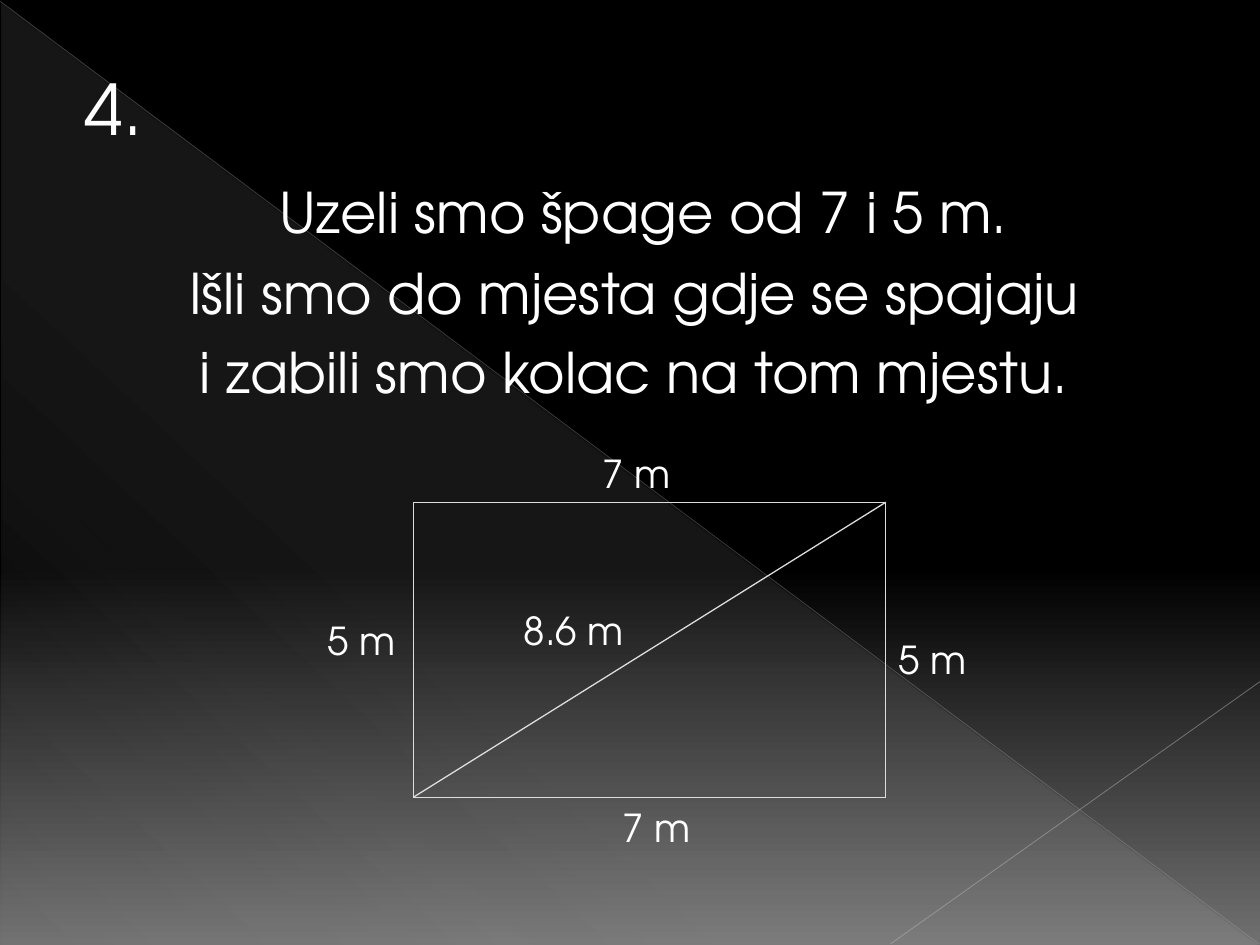
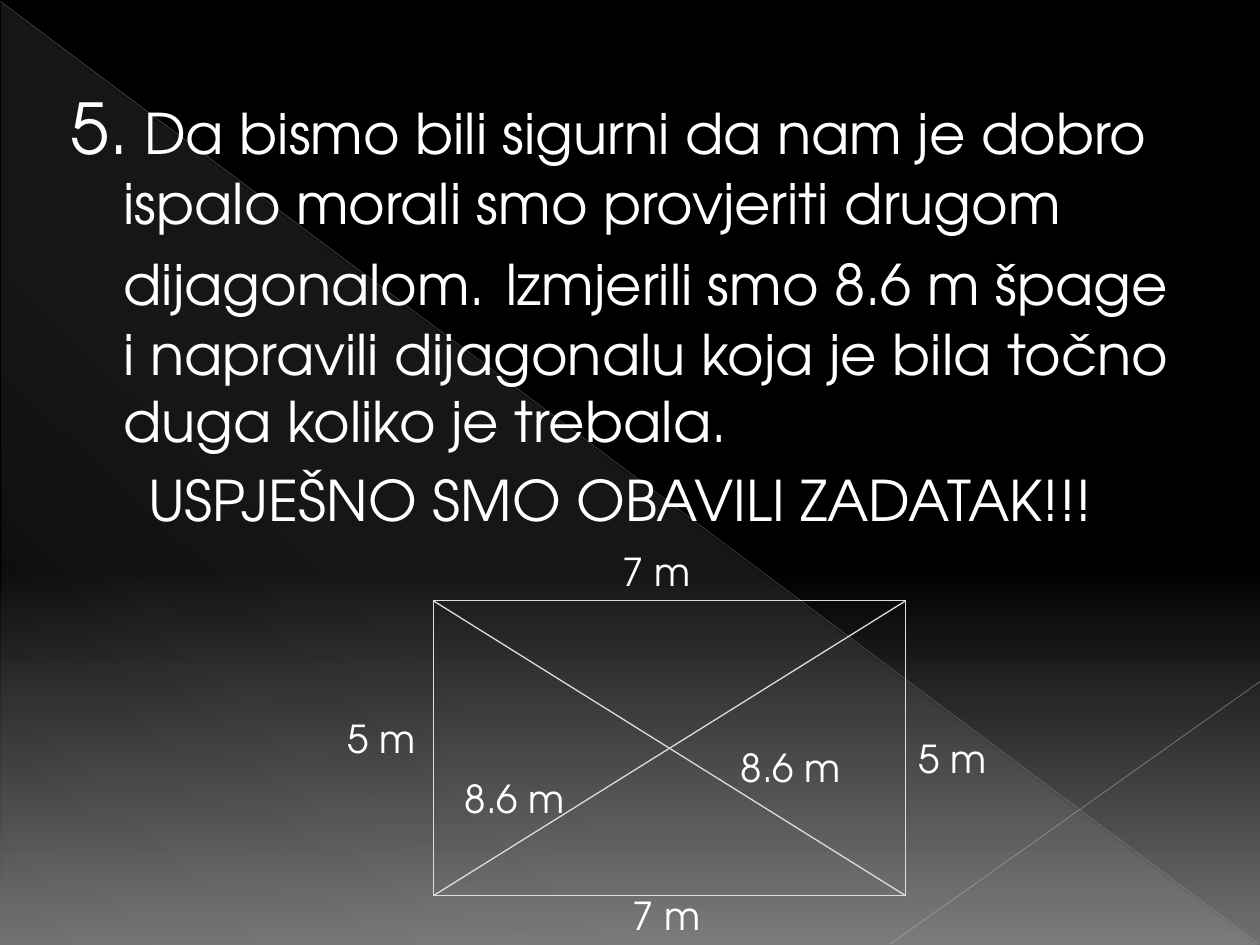
"""Build two slides on checking a measured rectangle with its diagonals."""
from dataclasses import dataclass

from lxml import etree
from pptx import Presentation
from pptx.dml.color import RGBColor
from pptx.enum.shapes import MSO_CONNECTOR, MSO_SHAPE
from pptx.enum.text import MSO_AUTO_SIZE, PP_ALIGN
from pptx.oxml.ns import qn
from pptx.util import Pt

STRAIGHT = MSO_CONNECTOR.STRAIGHT
RIGHT_TRIANGLE = MSO_SHAPE.RIGHT_TRIANGLE
CENTER = PP_ALIGN.CENTER
LEFT = PP_ALIGN.LEFT
NO_AUTOFIT = MSO_AUTO_SIZE.NONE
GROW = MSO_AUTO_SIZE.SHAPE_TO_FIT_TEXT


@dataclass(frozen=True)
class Theme:
    """Hold the colours, font and type sizes of the deck."""
    font: str = "TeX Gyre Adventor"
    text: str = "FFFFFF"
    rectangle_line: str = "DDDDDD"
    diagonal_line: str = "B4B4B4"
    corner_line: str = "BDBDBD"
    background: tuple = ((0, "000000", 100), (60, "000000", 100), (100, "707070", 100))
    veil: tuple = ((0, "F8F8F8", 10), (70, "F8F8F8", 8), (100, "F8F8F8", 1))
    number_size: int = 40
    body_size: int = 32
    label_size: int = 22


THEME = Theme()
SLIDE_WIDTH, SLIDE_HEIGHT = 720, 540
RECTANGLE_WIDTH, RECTANGLE_HEIGHT = 270, 168.6
LABEL_HEIGHT = 33.8


def add_run(paragraph, text, *, size=THEME.body_size, color=THEME.text):
    """Append formatted text to a paragraph."""
    run = paragraph.add_run()
    run.text = text
    run.font.name = THEME.font
    run.font.size = Pt(size)
    run.font.color.rgb = RGBColor.from_string(color)


def set_alpha(color_element, percent):
    """Make a colour element partly transparent."""
    etree.SubElement(color_element, qn("a:alpha")).set("val", str(percent * 1000))


def set_gradient(fill, owner, stops, angle):
    """Give the fill of an owner element a linear gradient."""
    fill.gradient()
    gradient = owner.find(".//" + qn("a:gradFill"))
    stop_list = gradient.find(qn("a:gsLst"))
    for stop in list(stop_list):
        stop_list.remove(stop)
    for position, color, opacity in stops:
        stop = etree.SubElement(stop_list, qn("a:gs"), pos=str(position * 1000))
        color_element = etree.SubElement(stop, qn("a:srgbClr"), val=color)
        set_alpha(color_element, opacity)
    gradient.find(qn("a:lin")).set("ang", str(angle * 60000))


def add_line(shapes, start, end, *, color=THEME.rectangle_line, width=0.75, opacity=100):
    """Draw a straight line without a shadow."""
    line = shapes.add_connector(STRAIGHT, *(Pt(value) for value in (*start, *end)))
    line.line.color.rgb = RGBColor.from_string(color)
    line.line.width = Pt(width)
    properties = line.element.spPr
    etree.SubElement(properties, qn("a:effectLst"))
    if opacity < 100:
        set_alpha(properties.find(".//" + qn("a:srgbClr")), opacity)
    return line


def add_label(shapes, text, left, top, width):
    """Add a measurement label."""
    box = shapes.add_textbox(Pt(left), Pt(top), Pt(width), Pt(LABEL_HEIGHT))
    box.text_frame.word_wrap = True
    box.text_frame.auto_size = GROW
    add_run(box.text_frame.paragraphs[0], text, size=THEME.label_size)


def decorate_layout(presentation, layout, slide):
    """Put the background, veil and thin lines behind every slide."""
    master = presentation.slide_master
    set_gradient(master.background.fill, master.element, THEME.background, 90)
    veil = slide.shapes.add_shape(RIGHT_TRIANGLE, Pt(0.7), Pt(1.4), Pt(718.6), Pt(538.6))
    veil.shadow.inherit = False
    veil.line.fill.background()
    set_gradient(veil.fill, veil.element, THEME.veil, 133)
    diagonal = add_line(slide.shapes, (0, 0.7), (719.3, 539.3),
                        color=THEME.diagonal_line, width=0.39, opacity=35)
    corner = add_line(slide.shapes, (SLIDE_WIDTH, 389.5), (509, 539.3),
                      color=THEME.corner_line, width=0.47, opacity=45)
    for index, shape in enumerate((veil, diagonal, corner)):
        shape.element.find(".//" + qn("p:cNvPr")).set("id", str(20 + index))
        layout.shapes.element.insert(2 + index, shape.element)


def add_slide(presentation, layout):
    """Add a slide that keeps only the body placeholder."""
    slide = presentation.slides.add_slide(layout)
    title = slide.shapes.title.element
    title.getparent().remove(title)
    return slide


def fill_body(slide, left, top, height, paragraphs):
    """Fill the body with paragraphs of (alignment, [(text, size), ...])."""
    body = slide.placeholders[1]
    body.left, body.top, body.width, body.height = Pt(left), Pt(top), Pt(648), Pt(height)
    frame = body.text_frame
    frame.auto_size = NO_AUTOFIT
    for index, (alignment, runs) in enumerate(paragraphs):
        paragraph = frame.add_paragraph() if index else frame.paragraphs[0]
        paragraph.alignment = alignment
        properties = paragraph._p.get_or_add_pPr()
        properties.set("marL", str(Pt(35.3)))
        properties.set("indent", str(Pt(-30.2)))
        etree.SubElement(properties, qn("a:buNone"))
        for text, size in runs:
            add_run(paragraph, text, size=size)


def add_rectangle_diagram(slide, left, top, bottom_label, diagonal_labels, both_diagonals=False):
    """Draw the measured rectangle; label places are offsets from its corner."""
    shapes = slide.shapes.add_group_shape().shapes
    right, bottom = left + RECTANGLE_WIDTH, top + RECTANGLE_HEIGHT
    corners = [(left, top), (right, top), (right, bottom), (left, bottom)]
    for start, end in zip(corners, corners[1:] + corners[:1]):
        add_line(shapes, start, end)
    add_line(shapes, corners[3], corners[1])
    if both_diagonals:
        add_line(shapes, corners[0], corners[2])
    labels = [("7 m", (101, -33.6), 90), ("7 m", bottom_label, 90),
              ("5 m", (-56.2, 62), 56.2), ("5 m", (RECTANGLE_WIDTH, 73), 56.2)]
    labels += [("8.6 m", place, 78.5) for place in diagonal_labels]
    for text, (across, down), width in labels:
        add_label(shapes, text, left + across, top + down, width)


def build_stake_slide(slide):
    """Build step four, the stake at the meeting point."""
    number, body = THEME.number_size, THEME.body_size
    fill_body(slide, 36, 33.8, 474.5, [
        (LEFT, [("4.", number)]),
        (CENTER, [(" ", number), ("Uzeli smo špage od 7 i 5 m.", body)]),
        (CENTER, [("Išli smo do mjesta gdje se spajaju", body)]),
        (CENTER, [("i zabili smo kolac na tom mjestu.", body)]),
    ])
    add_rectangle_diagram(slide, 236.2, 287, (112.3, 169), [(56.1, 56.6)])


def build_check_slide(slide):
    """Build step five, the check with the second diagonal."""
    number, body = THEME.number_size, THEME.body_size
    fill_body(slide, 28.1, 44.6, 463, [
        (LEFT, [
            ("5.", number),
            (" Da bismo bili sigurni da nam je dobro ispalo morali smo "
             "provjeriti drugom dijagonalom.", body),
            (" ", number),
            ("Izmjerili smo 8.6 m špage i napravili dijagonalu koja je bila "
             "točno duga koliko je trebala.", body),
        ]),
        (CENTER, [("USPJEŠNO SMO OBAVILI ZADATAK!!!", body)]),
    ])
    add_rectangle_diagram(slide, 247.6, 343.3, (106.6, 162.8),
                          [(10.9, 95.8), (168.6, 78.5)], both_diagonals=True)


def main():
    """Build and save the presentation."""
    presentation = Presentation()
    presentation.slide_width, presentation.slide_height = Pt(SLIDE_WIDTH), Pt(SLIDE_HEIGHT)
    layout = presentation.slide_layouts[1]
    stake_slide = add_slide(presentation, layout)
    check_slide = add_slide(presentation, layout)
    decorate_layout(presentation, layout, stake_slide)
    build_stake_slide(stake_slide)
    build_check_slide(check_slide)
    presentation.save("out.pptx")


if __name__ == "__main__":
    main()
